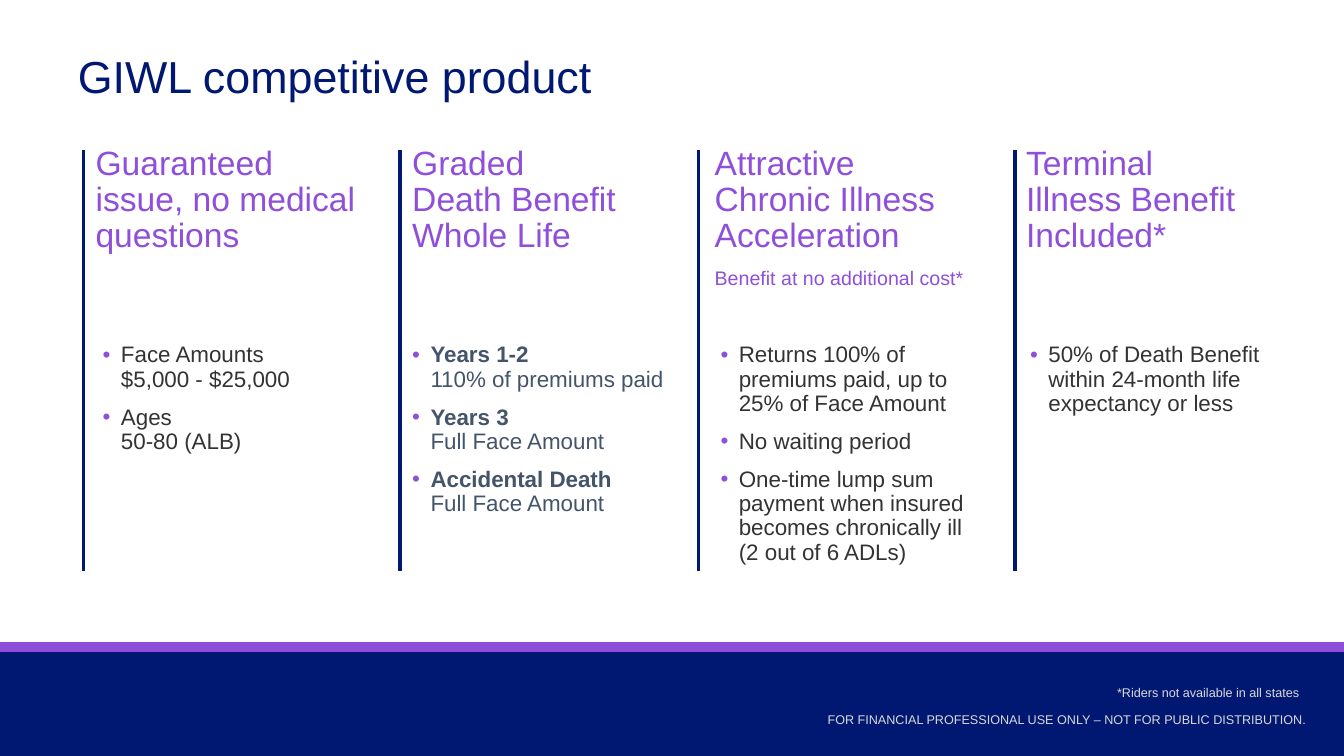
from copy import deepcopy
from dataclasses import dataclass

from lxml.etree import SubElement
from pptx import Presentation
from pptx.dml.color import RGBColor
from pptx.enum.shapes import MSO_CONNECTOR, MSO_SHAPE
from pptx.enum.text import MSO_ANCHOR, PP_ALIGN
from pptx.oxml.ns import qn
from pptx.util import Cm, Pt

NAVY = RGBColor(0x00, 0x18, 0x71)
PURPLE = RGBColor(0x8F, 0x4F, 0xDA)
CHARCOAL = RGBColor(0x33, 0x33, 0x33)
SLATE = RGBColor(0x44, 0x54, 0x6A)
PALE_GREY = RGBColor(0xD9, 0xD9, 0xD9)

SLIDE_WIDTH, SLIDE_HEIGHT = Cm(33.87), Cm(19.05)
RULE_TOP, RULE_BOTTOM = Cm(3.78), Cm(14.38)
HEADING_TOP, HEADING_WIDTH, HEADING_HEIGHT = Cm(3.68), Cm(7.06), Cm(4.14)
POINTS_TOP, POINTS_WIDTH, POINTS_HEIGHT = Cm(8.66), Cm(6.99), Cm(7.21)
HANGING = Cm(0.46)

FRAME_FORMAT = {
    "margin_left": 0, "margin_right": 0, "margin_top": 0, "margin_bottom": 0,
    "word_wrap": True, "vertical_anchor": MSO_ANCHOR.TOP,
}
HEADING_FONT = {"size": Pt(24), "name": "Arial"}
SUBHEADING_FONT = {"size": Pt(14), "name": "Arial"}
POINT_FONT = {"size": Pt(16), "name": "Arial"}
TITLE_FONT = {"size": Pt(32), "name": "Arial"}
NOTE_FONT = {"size": Pt(9), "name": "Arial"}


@dataclass
class Benefit:
    rule_x: Cm
    heading_x: Cm
    points_x: Cm
    heading: tuple
    points: list
    subheading: str = ""
    color: RGBColor = CHARCOAL
    bold_lead: bool = False


BENEFITS = [
    Benefit(Cm(2.11), Cm(2.41), Cm(2.59),
            ("Guaranteed", "issue, no medical questions"),
            [("Face Amounts", "$5,000 - $25,000"), ("Ages", "50-80 (ALB)")]),
    Benefit(Cm(10.08), Cm(10.39), Cm(10.39),
            ("Graded", "Death Benefit Whole Life"),
            [("Years 1-2", "110% of premiums paid"),
             ("Years 3", "Full Face Amount"),
             ("Accidental Death", "Full Face Amount")],
            color=SLATE, bold_lead=True),
    Benefit(Cm(17.6), Cm(18.01), Cm(18.16),
            ("Attractive", "Chronic Illness Acceleration"),
            [("Returns 100% of premiums paid, up to 25% of Face Amount",),
             ("No waiting period",),
             ("One-time lump sum payment when insured becomes chronically ill",
              "(2 out of 6 ADLs)")],
            subheading="Benefit at no additional cost*"),
    Benefit(Cm(25.58), Cm(25.86), Cm(25.96),
            ("Terminal", "Illness Benefit Included*"),
            [("50% of Death Benefit within 24-month life expectancy or less",)]),
]


def apply(target, values):
    for attribute, value in values.items():
        setattr(target, attribute, value)


def add_text_frame(slide, left, top, width, height):
    frame = slide.shapes.add_textbox(left, top, width, height).text_frame
    apply(frame, FRAME_FORMAT)
    return frame


def write_lines(paragraph, lines, font, color, bold_lead=False):
    """Write lines joined by line breaks that keep the size of the text."""
    for number, line in enumerate(lines):
        if number:
            paragraph.add_line_break()
        run = paragraph.add_run()
        run.text = line
        apply(run.font, font)
        run.font.bold = bold_lead and number == 0
        run.font.color.rgb = color
    for line_break in paragraph._p.findall(qn("a:br")):
        line_break.append(deepcopy(run._r.rPr))


def next_paragraph(frame, number):
    paragraph = frame.add_paragraph() if number else frame.paragraphs[0]
    apply(paragraph, {"line_spacing": 0.9, "space_before": Pt(10 if number else 0)})
    return paragraph


def add_bullet(paragraph):
    properties = paragraph._p.get_or_add_pPr()
    properties.set("marL", str(HANGING))
    properties.set("indent", str(-HANGING))
    bullet_color = SubElement(properties, qn("a:buClr"))
    SubElement(bullet_color, qn("a:srgbClr"), val=str(PURPLE))
    SubElement(properties, qn("a:buFont"), typeface="Arial")
    SubElement(properties, qn("a:buChar"), char="•")


def add_band(slide, top, height, color):
    band = slide.shapes.add_shape(MSO_SHAPE.RECTANGLE, 0, top, SLIDE_WIDTH, height)
    band.shadow.inherit = False
    band.fill.solid()
    band.fill.fore_color.rgb = color
    band.line.fill.background()


def add_rule(slide, x):
    rule = slide.shapes.add_connector(MSO_CONNECTOR.STRAIGHT, x, RULE_TOP, x, RULE_BOTTOM)
    rule.line.color.rgb = NAVY
    rule.line.width = Pt(2.5)
    SubElement(rule._element.spPr, qn("a:effectLst"))


def add_title(slide, words):
    title = slide.shapes.title
    apply(title, {"left": Cm(1.96), "top": Cm(1.37), "width": Cm(29.72), "height": Cm(1.55)})
    apply(title.text_frame, FRAME_FORMAT)
    paragraph = next_paragraph(title.text_frame, 0)
    paragraph.alignment = PP_ALIGN.LEFT
    write_lines(paragraph, [words], TITLE_FONT, NAVY)


def add_note(slide, words, left, top, width):
    paragraph = add_text_frame(slide, left, top, width, Cm(0.46)).paragraphs[0]
    paragraph.alignment = PP_ALIGN.RIGHT
    write_lines(paragraph, [words], NOTE_FONT, PALE_GREY)


def add_benefit(slide, benefit):
    add_rule(slide, benefit.rule_x)
    heading = add_text_frame(slide, benefit.heading_x, HEADING_TOP,
                             HEADING_WIDTH, HEADING_HEIGHT)
    write_lines(next_paragraph(heading, 0), benefit.heading, HEADING_FONT, PURPLE)
    if benefit.subheading:
        write_lines(next_paragraph(heading, 1), [benefit.subheading],
                    SUBHEADING_FONT, PURPLE)
    points = add_text_frame(slide, benefit.points_x, POINTS_TOP,
                            POINTS_WIDTH, POINTS_HEIGHT)
    for number, lines in enumerate(benefit.points):
        paragraph = next_paragraph(points, number)
        add_bullet(paragraph)
        write_lines(paragraph, lines, POINT_FONT, benefit.color, benefit.bold_lead)


def main():
    deck = Presentation()
    apply(deck, {"slide_width": SLIDE_WIDTH, "slide_height": SLIDE_HEIGHT})
    slide = deck.slides.add_slide(deck.slide_layouts[5])
    add_band(slide, Cm(16.41), Cm(2.64), NAVY)
    add_band(slide, Cm(16.18), Cm(0.25), PURPLE)
    add_title(slide, "GIWL competitive product")
    for benefit in BENEFITS:
        add_benefit(slide, benefit)
    add_note(slide, "*Riders not available in all states", Cm(26.12), Cm(17.27), Cm(6.62))
    add_note(slide, "FOR FINANCIAL PROFESSIONAL USE ONLY – NOT FOR PUBLIC DISTRIBUTION.",
             Cm(4.88), Cm(17.93), Cm(28.02))
    deck.save("out.pptx")


if __name__ == "__main__":
    main()
